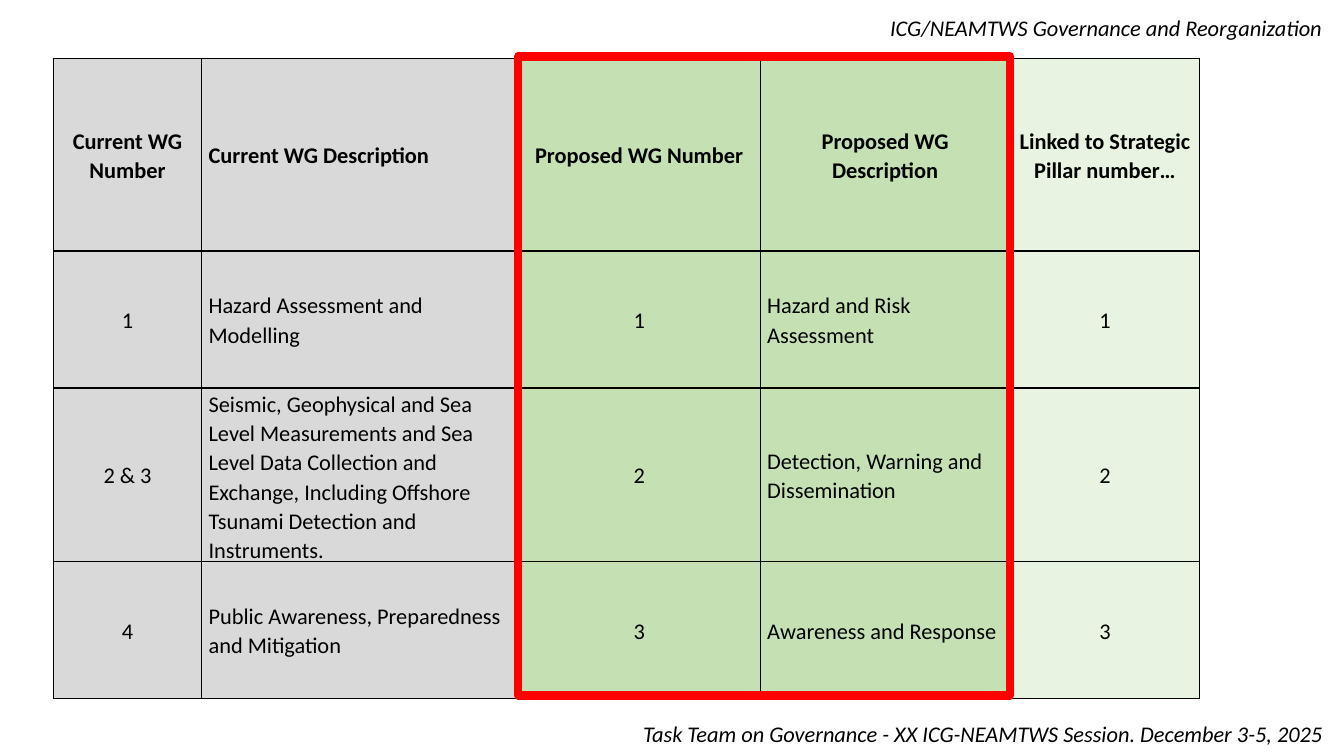
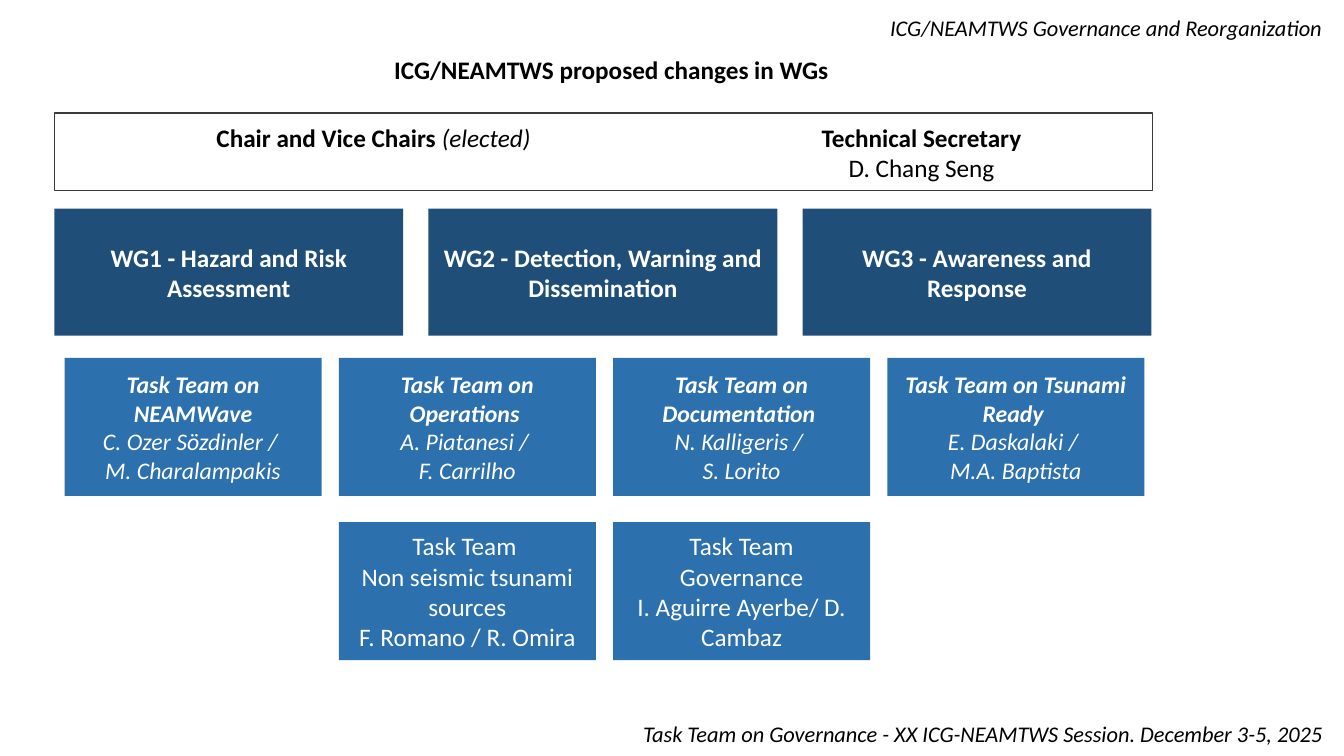
from dataclasses import dataclass

from lxml.etree import SubElement
from pptx import Presentation
from pptx.dml.color import RGBColor
from pptx.enum.shapes import MSO_SHAPE as Preset
from pptx.enum.text import MSO_ANCHOR as Anchor, PP_ALIGN as Align
from pptx.oxml.ns import qn
from pptx.util import Inches, Pt


@dataclass(frozen=True)
class Theme:
    font: str = "Calibri"
    black: str = "000000"
    white: str = "FFFFFF"
    current: str = "D9D9D9"
    proposed: str = "C5E0B3"
    pillar: str = "E8F3E1"
    highlight: str = "FF0000"
    group: str = "1F4E79"
    team: str = "2C70AE"
    outline: str = "3A3A3A"
    body: int = 16
    team_size: int = 17
    heading: int = 18


THEME = Theme()

# A paragraph is a list of (text, style) runs; style letters: b bold, i italic.
RUNNING_TEXT = [
    ("Task Team on Governance - XX ICG-NEAMTWS Session. December 3-5, 2025",
     (6.2, 7.1, 7.1, 0.37)),
    ("ICG/NEAMTWS Governance and Reorganization", (8.68, 0.09, 4.58, 0.37)),
]

TABLE_LEFT, TABLE_TOP = 0.53, 0.58
ROW_HEIGHTS = [1.91, 1.36, 1.71, 1.36]
# width, fill, alignment of the body cells
COLUMNS = [
    (1.47, THEME.current, Align.CENTER),
    (3.14, THEME.current, Align.LEFT),
    (2.4, THEME.proposed, Align.CENTER),
    (2.48, THEME.proposed, Align.LEFT),
    (1.88, THEME.pillar, Align.CENTER),
]
HEADER_ALIGNMENTS = [Align.CENTER, Align.LEFT] + [Align.CENTER] * 3
PROPOSED_COLUMNS = slice(2, 4)
ROWS = [
    ["Current WG Number", "Current WG Description", "Proposed WG Number",
     "Proposed WG Description", "Linked to Strategic Pillar number…"],
    ["1", "Hazard Assessment and Modelling", "1",
     "Hazard and Risk Assessment", "1"],
    ["2 & 3", "Seismic, Geophysical and Sea Level Measurements and Sea Level "
     "Data Collection and Exchange, Including Offshore Tsunami Detection and "
     "Instruments.", "2", "Detection, Warning and Dissemination", "2"],
    ["4", "Public Awareness, Preparedness and Mitigation", "3",
     "Awareness and Response", "3"],
]

CHART_TITLE = "ICG/NEAMTWS proposed changes in WGs"
CHAIRS = [[("Chair and Vice Chairs ", "b"), ("(elected)", "i")]]
SECRETARY = [[("Technical Secretary", "b")], [("D. Chang Seng", "")]]
WORKING_GROUPS = [
    "WG1 - Hazard and Risk Assessment",
    "WG2 - Detection, Warning and Dissemination",
    "WG3 - Awareness and Response",
]
TASK_TEAMS = [
    ("Task Team on NEAMWave", "C. Ozer Sözdinler / ", "M. Charalampakis"),
    ("Task Team on Operations ", "A. Piatanesi / ", "F. Carrilho"),
    ("Task Team on Documentation ", "N. Kalligeris / ", "S. Lorito"),
    ("Task Team on Tsunami Ready ", "E. Daskalaki / ", "M.A. Baptista"),
]
# column in the task team grid, lines
PROPOSED_TEAMS = [
    (1, ("Task Team ", "Non seismic tsunami sources", "F. Romano / R. Omira")),
    (2, ("Task Team", "Governance", "I. Aguirre Ayerbe/ D. Cambaz")),
]


def rgb(colour):
    return RGBColor.from_string(colour)


def inches(box):
    return [Inches(length) for length in box]


def set_style(font, style):
    font.bold = "b" in style
    font.italic = "i" in style


def write(frame, paragraphs, size, colour=THEME.black, align=Align.CENTER):
    frame.word_wrap = True
    for index, runs in enumerate(paragraphs):
        paragraph = frame.add_paragraph() if index else frame.paragraphs[0]
        paragraph.alignment = align
        font = paragraph.font
        font.name, font.size = THEME.font, Pt(size)
        font.color.rgb = rgb(colour)
        for text, style in runs:
            run = paragraph.add_run()
            run.text = text
            set_style(font if len(runs) == 1 else run.font, style)


def add_text(slide, box, paragraphs, size):
    write(slide.shapes.add_textbox(*inches(box)).text_frame, paragraphs, size)


def add_box(slide, box, fill, paragraphs, size):
    shape = slide.shapes.add_shape(Preset.RECTANGLE, *inches(box))
    shape.shadow.inherit = False
    shape.fill.solid()
    shape.fill.fore_color.rgb = rgb(fill)
    shape.line.fill.background()
    shape.text_frame.vertical_anchor = Anchor.MIDDLE
    write(shape.text_frame, paragraphs, size, THEME.white)


def add_outline(slide, box, colour, width):
    shape = slide.shapes.add_shape(Preset.RECTANGLE, *inches(box))
    shape.shadow.inherit = False
    shape.fill.background()
    shape.line.color.rgb = rgb(colour)
    shape.line.width = Pt(width)


def add_borders(cell):
    properties = cell._tc.get_or_add_tcPr()
    for side in ("a:lnL", "a:lnR", "a:lnT", "a:lnB"):
        line = SubElement(properties, qn(side), w=str(Pt(1)))
        fill = SubElement(line, qn("a:solidFill"))
        SubElement(fill, qn("a:srgbClr"), val=THEME.black)


def add_slide(presentation):
    """Add a blank slide with the running header and footer."""
    slide = presentation.slides.add_slide(presentation.slide_layouts[6])
    for text, box in RUNNING_TEXT:
        add_text(slide, box, [[(text, "i")]], THEME.body)
    return slide


def format_cell(cell, text, fill, align, style):
    add_borders(cell)
    cell.fill.solid()
    cell.fill.fore_color.rgb = rgb(fill)
    cell.vertical_anchor = Anchor.MIDDLE
    cell.margin_left = cell.margin_right = Inches(0.07)
    cell.margin_top, cell.margin_bottom = Inches(0.01), 0
    write(cell.text_frame, [[(text, style)]], THEME.body, align=align)
    paragraph = cell.text_frame.paragraphs[0]
    paragraph.line_spacing = 1.07
    paragraph.space_after = Pt(8)


def build_comparison(presentation):
    slide = add_slide(presentation)
    widths = [width for width, _, _ in COLUMNS]
    box = (TABLE_LEFT, TABLE_TOP, sum(widths), sum(ROW_HEIGHTS))
    table = slide.shapes.add_table(len(ROWS), len(COLUMNS), *inches(box)).table
    table.horz_banding = False
    for column, width in zip(table.columns, widths):
        column.width = Inches(width)
    for row, height in zip(table.rows, ROW_HEIGHTS):
        row.height = Inches(height)
    for row, texts in enumerate(ROWS):
        for column, (_, fill, align) in enumerate(COLUMNS):
            if row == 0:
                align = HEADER_ALIGNMENTS[column]
            format_cell(table.cell(row, column), texts[column], fill, align,
                        "" if row else "b")

    left = TABLE_LEFT + sum(widths[:PROPOSED_COLUMNS.start])
    frame = (left, TABLE_TOP - 0.02, sum(widths[PROPOSED_COLUMNS]),
             sum(ROW_HEIGHTS))
    add_outline(slide, frame, THEME.highlight, 6)


def build_organization(presentation):
    slide = add_slide(presentation)
    for column, name in enumerate(WORKING_GROUPS):
        add_box(slide, (0.54 + 3.71 * column, 2.07, 3.46, 1.26), THEME.group,
                [[(name, "b")]], THEME.heading)

    def add_team(column, top, paragraphs, size):
        add_box(slide, (0.64 + 2.72 * column, top, 2.55, 1.37), THEME.team,
                paragraphs, size)

    for column, (name, *leads) in enumerate(TASK_TEAMS):
        paragraphs = [[(name, "bi")]] + [[(lead, "i")] for lead in leads]
        add_team(column, 3.55, paragraphs, THEME.team_size)
    for column, lines in PROPOSED_TEAMS:
        add_team(column, 5.18, [[(line, "")] for line in lines], THEME.heading)

    add_outline(slide, (0.54, 1.12, 10.89, 0.77), THEME.outline, 1)
    for box, paragraphs in [
        ((0.64, 1.16, 6.13, 0.4), CHAIRS),
        ((7.37, 1.16, 3.54, 0.71), SECRETARY),
        ((3.8, 0.49, 4.53, 0.4), [[(CHART_TITLE, "b")]]),
    ]:
        add_text(slide, box, paragraphs, THEME.heading)


def main():
    presentation = Presentation()
    presentation.slide_width = Inches(13.33)
    presentation.slide_height = Inches(7.5)
    build_comparison(presentation)
    build_organization(presentation)
    presentation.save("out.pptx")


if __name__ == "__main__":
    main()
